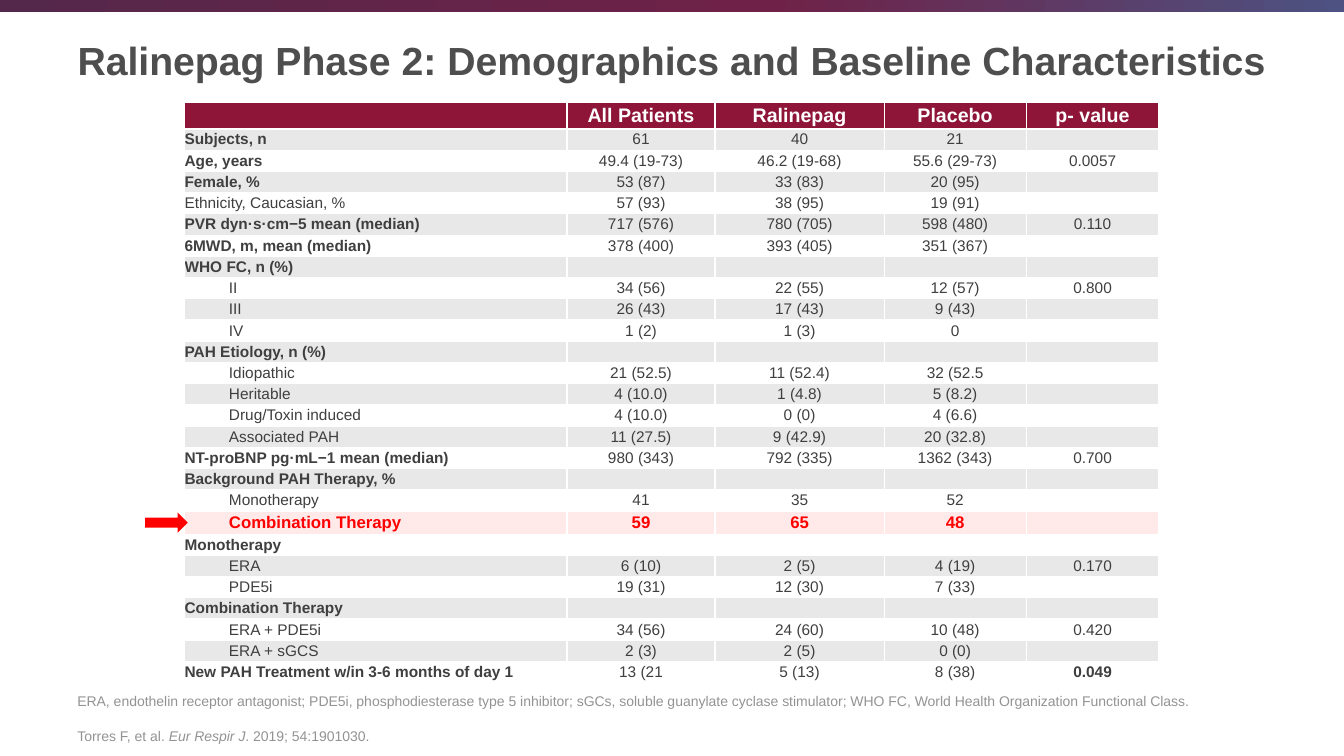
from copy import deepcopy

from lxml.etree import SubElement
from pptx import Presentation
from pptx.dml.color import RGBColor
from pptx.enum.shapes import MSO_SHAPE as Shape
from pptx.enum.text import MSO_ANCHOR as Anchor, MSO_AUTO_SIZE as AutoSize, PP_ALIGN as Align
from pptx.oxml.ns import qn
from pptx.util import Cm, Pt

WHITE = RGBColor(0xFF, 0xFF, 0xFF)
BURGUNDY = RGBColor(0x8E, 0x15, 0x37)
BAND_GREY = RGBColor(0xE8, 0xE8, 0xE8)
PINK = RGBColor(0xFF, 0xE9, 0xE9)
RED = RGBColor(0xFF, 0x00, 0x00)
TITLE_GREY = RGBColor(0x4D, 0x4E, 0x4D)
BODY_GREY = RGBColor(0x3F, 0x3F, 0x3F)
NOTE_GREY = RGBColor(0x93, 0x93, 0x93)
BAR_STOPS = [
    (0, RGBColor(0x54, 0x28, 0x4B)),
    (0.57, RGBColor(0x6F, 0x21, 0x47)),
    (1, RGBColor(0x4D, 0x52, 0x82)),
]

TITLE = "Ralinepag Phase 2: Demographics and Baseline Characteristics"
HEADERS = ("", "All Patients", "Ralinepag", "Placebo", "p- value")
GROUP, PLAIN, SUB, KEY = "group", "plain", "sub", "key"
ROWS = [
    (GROUP, "Subjects, n", "61", "40", "21", ""),
    (GROUP, "Age, years", "49.4 (19-73)", "46.2 (19-68)", "55.6 (29-73)", "0.0057"),
    (GROUP, "Female, %", "53 (87)", "33 (83)", "20 (95)", ""),
    (PLAIN, "Ethnicity, Caucasian, %", "57 (93)", "38 (95)", "19 (91)", ""),
    (GROUP, "PVR dyn·s·cm−5 mean (median)", "717 (576)", "780 (705)", "598 (480)", "0.110"),
    (GROUP, "6MWD, m, mean (median)", "378 (400)", "393 (405)", "351 (367)", ""),
    (GROUP, "WHO FC, n (%)", "", "", "", ""),
    (SUB, "II", "34 (56)", "22 (55)", "12 (57)", "0.800"),
    (SUB, "III", "26 (43)", "17 (43)", "9 (43)", ""),
    (SUB, "IV", "1 (2)", "1 (3)", "0", ""),
    (GROUP, "PAH Etiology, n (%)", "", "", "", ""),
    (SUB, "Idiopathic", "21 (52.5)", "11 (52.4)", "32 (52.5", ""),
    (SUB, "Heritable", "4 (10.0)", "1 (4.8)", "5 (8.2)", ""),
    (SUB, "Drug/Toxin induced", "4 (10.0)", "0 (0)", "4 (6.6)", ""),
    (SUB, "Associated PAH", "11 (27.5)", "9 (42.9)", "20 (32.8)", ""),
    (GROUP, "NT-proBNP pg·mL−1 mean (median)", "980 (343)", "792 (335)", "1362 (343)", "0.700"),
    (GROUP, "Background PAH Therapy, %", "", "", "", ""),
    (SUB, "Monotherapy", "41", "35", "52", ""),
    (KEY, "Combination Therapy", "59", "65", "48", ""),
    (GROUP, "Monotherapy", "", "", "", ""),
    (SUB, "ERA", "6 (10)", "2 (5)", "4 (19)", "0.170"),
    (SUB, "PDE5i", "19 (31)", "12 (30)", "7 (33)", ""),
    (GROUP, "Combination Therapy", "", "", "", ""),
    (SUB, "ERA + PDE5i", "34 (56)", "24 (60)", "10 (48)", "0.420"),
    (SUB, "ERA + sGCS", "2 (3)", "2 (5)", "0 (0)", ""),
    (GROUP, "New PAH Treatment w/in 3-6 months of day 1", "13 (21", "5 (13)", "8 (38)", "0.049"),
]
SIGNIFICANT = {"0.049"}
FOOTNOTES = [
    [("ERA, endothelin receptor antagonist; PDE5i, phosphodiesterase type 5 inhibitor; "
      "sGCs, soluble guanylate cyclase stimulator; "
      "WHO FC, World Health Organization Functional Class.", False)],
    [("Torres F, et al. ", False), ("Eur Respir J", True), (". 2019; 54:1901030.", False)],
]

SLIDE_WIDTH, SLIDE_HEIGHT = Cm(33.87), Cm(19.05)
MARGIN_LEFT = Cm(1.7)
TABLE_LEFT, TABLE_TOP = Cm(4.65), Cm(2.57)
COLUMN_WIDTHS = [Cm(width) for width in (9.64, 3.73, 4.26, 3.58, 3.35)]
HEADER_HEIGHT, ROW_HEIGHT, KEY_HEIGHT = Cm(0.68), Cm(0.535), Cm(0.58)
ARROW_LEFT, ARROW_WIDTH, ARROW_HEIGHT = Cm(3.66), Cm(1.07), Cm(0.51)
SUB_INDENT = Cm(1.12)

HEADER_FONT = {"size": Pt(14), "bold": True, "color": WHITE}
KEY_FONT = {"size": Pt(12), "bold": True, "color": RED}
BODY_FONT = {"size": Pt(11), "bold": False, "color": BODY_GREY}


def add_text(paragraph, text, font):
    run = paragraph.add_run()
    run.text = text
    for name, value in {"name": "Arial", **font}.items():
        if name == "color":
            run.font.color.rgb = value
        else:
            setattr(run.font, name, value)


def add_borders(cell):
    properties = cell._tc.get_or_add_tcPr()
    for side in ("a:lnL", "a:lnR", "a:lnT", "a:lnB"):
        line = SubElement(properties, qn(side), w=str(Pt(1)))
        SubElement(SubElement(line, qn("a:solidFill")), qn("a:srgbClr"), val=str(WHITE))


def fill_cell(cell, text, fill, font, align, indent=0):
    add_borders(cell)
    cell.fill.solid()
    cell.fill.fore_color.rgb = fill
    cell.vertical_anchor = Anchor.MIDDLE
    for side in ("left", "right", "top", "bottom"):
        setattr(cell, f"margin_{side}", 0)
    paragraph = cell.text_frame.paragraphs[0]
    paragraph.alignment = align
    if indent:
        paragraph._p.get_or_add_pPr().set("marL", str(indent))
    if text:
        add_text(paragraph, text, font)
    else:
        SubElement(paragraph._p, qn("a:endParaRPr"), sz=str(int(font["size"].pt * 100)))


def add_top_bar(slide):
    bar = slide.shapes.add_shape(Shape.RECTANGLE, 0, 0, SLIDE_WIDTH, Cm(0.3))
    bar.shadow.inherit = False
    bar.line.fill.background()
    bar.fill.gradient()
    bar.fill.gradient_angle = 0
    stop_list = bar._element.spPr.find(".//" + qn("a:gsLst"))
    stop_list.append(deepcopy(stop_list[0]))
    for stop, (position, color) in zip(bar.fill.gradient_stops, BAR_STOPS):
        stop.position = position
        stop.color.rgb = color


def add_title(slide):
    title = slide.shapes.title
    title.left, title.top, title.width, title.height = MARGIN_LEFT, Cm(0.56), Cm(31.01), Cm(1.88)
    frame = title.text_frame
    frame.auto_size = AutoSize.NONE
    frame.vertical_anchor = Anchor.MIDDLE
    frame.paragraphs[0].alignment = Align.LEFT
    add_text(frame.paragraphs[0], TITLE, {"size": Pt(28), "bold": True, "color": TITLE_GREY})


def add_footnotes(slide):
    box = slide.shapes.add_textbox(MARGIN_LEFT, Cm(17.65), Cm(29.85), Cm(1.22))
    frame = box.text_frame
    frame.word_wrap = True
    frame.vertical_anchor = Anchor.BOTTOM
    for index, parts in enumerate(FOOTNOTES):
        paragraph = frame.add_paragraph() if index else frame.paragraphs[0]
        if index:
            paragraph.space_before = Pt(12.5)
        for text, italic in parts:
            add_text(paragraph, text, {"size": Pt(10), "italic": italic, "color": NOTE_GREY})


def add_baseline_table(slide):
    heights = [HEADER_HEIGHT] + [KEY_HEIGHT if row[0] == KEY else ROW_HEIGHT for row in ROWS]
    table = slide.shapes.add_table(
        len(heights), len(HEADERS), TABLE_LEFT, TABLE_TOP, sum(COLUMN_WIDTHS), sum(heights)
    ).table
    table.horz_banding = False
    for column, width in zip(table.columns, COLUMN_WIDTHS):
        column.width = width
    for row, height in zip(table.rows, heights):
        row.height = height
    for column, text in enumerate(HEADERS):
        fill_cell(table.cell(0, column), text, BURGUNDY, HEADER_FONT, Align.CENTER)
    for number, (kind, label, *values) in enumerate(ROWS, start=1):
        fill = PINK if kind == KEY else BAND_GREY if number % 2 else WHITE
        font = KEY_FONT if kind == KEY else BODY_FONT
        label_font = {**font, "bold": kind in (GROUP, KEY)}
        indent = SUB_INDENT if kind in (SUB, KEY) else 0
        fill_cell(table.cell(number, 0), label, fill, label_font, Align.LEFT, indent)
        for column, value in enumerate(values, start=1):
            value_font = {**font, "bold": font["bold"] or value in SIGNIFICANT}
            fill_cell(table.cell(number, column), value, fill, value_font, Align.CENTER)
        if kind == KEY:
            add_arrow(slide, TABLE_TOP + sum(heights[:number]) + KEY_HEIGHT // 2)


def add_arrow(slide, middle):
    arrow = slide.shapes.add_shape(
        Shape.RIGHT_ARROW, ARROW_LEFT, middle - ARROW_HEIGHT // 2, ARROW_WIDTH, ARROW_HEIGHT
    )
    arrow.shadow.inherit = False
    arrow.fill.solid()
    arrow.fill.fore_color.rgb = RED
    arrow.line.fill.background()


def main():
    presentation = Presentation()
    presentation.slide_width, presentation.slide_height = SLIDE_WIDTH, SLIDE_HEIGHT
    slide = presentation.slides.add_slide(presentation.slide_layouts[5])
    add_top_bar(slide)
    add_footnotes(slide)
    add_title(slide)
    add_baseline_table(slide)
    presentation.save("out.pptx")


if __name__ == "__main__":
    main()
